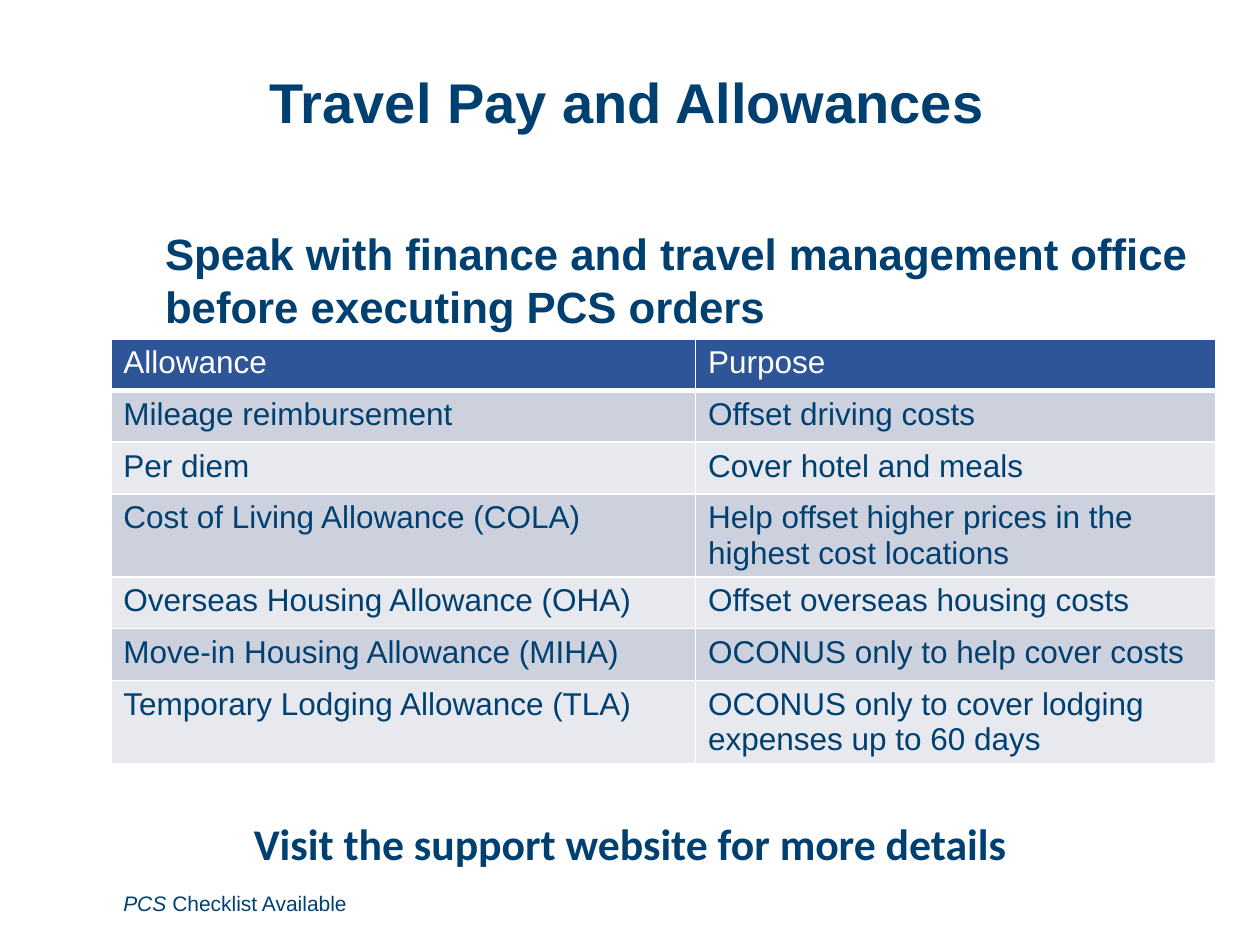
from lxml.etree import SubElement
from pptx import Presentation
from pptx.dml.color import RGBColor
from pptx.enum.text import MSO_ANCHOR, MSO_AUTO_SIZE, PP_ALIGN
from pptx.oxml.ns import qn
from pptx.util import Inches, Pt

NAVY = "004071"
WHITE = "FFFFFF"
HEADER_FILL = "2E5597"
BAND_FILLS = ["CDD1DD", "E8E9EF"]
ALLOWANCES = [
    ("Allowance", "Purpose"),
    ("Mileage reimbursement", "Offset driving costs"),
    ("Per diem", "Cover hotel and meals"),
    ("Cost of Living Allowance (COLA)",
     "Help offset higher prices in the highest cost locations"),
    ("Overseas Housing Allowance (OHA)", "Offset overseas housing costs"),
    ("Move-in Housing Allowance (MIHA)", "OCONUS only to help cover costs"),
    ("Temporary Lodging Allowance (TLA)",
     "OCONUS only to cover lodging expenses up to 60 days"),
]


def color(value):
    return RGBColor.from_string(value)


class SlideBuilder:
    def __init__(self, page, font="Arial", text_color=NAVY):
        self.page = page
        self.font = font
        self.text_color = text_color

    def style(self, span, size, bold=False, italic=False, font=None, fill=None):
        span.font.name = font or self.font
        span.font.size = Pt(size)
        span.font.bold = bold
        span.font.italic = italic
        span.font.color.rgb = color(fill or self.text_color)

    def place(self, box, left, top, width, height):
        box.left, box.top = Inches(left), Inches(top)
        box.width, box.height = Inches(width), Inches(height)

    def title(self, text, *bounds):
        box = self.page.shapes.title
        self.place(box, *bounds)
        frame = box.text_frame
        frame.text = text
        frame.auto_size = MSO_AUTO_SIZE.NONE
        frame.vertical_anchor = MSO_ANCHOR.MIDDLE
        para = frame.paragraphs[0]
        para.alignment = PP_ALIGN.LEFT
        para.line_spacing = 0.9
        self.style(para.runs[0], 32, bold=True)

    def body(self, text, *bounds):
        box = self.page.placeholders[1]
        self.place(box, *bounds)
        frame = box.text_frame
        frame.text = text
        frame.auto_size = MSO_AUTO_SIZE.NONE
        para = frame.paragraphs[0]
        properties = para._p.get_or_add_pPr()
        properties.set("marL", str(Inches(0.01)))
        properties.set("indent", "0")
        SubElement(properties, qn("a:buNone"))
        para.space_before = Pt(0)
        self.style(para.runs[0], 25, bold=True)

    def text(self, spans, bounds, size, align=PP_ALIGN.LEFT, font=None):
        """Add a one-paragraph box from (text, bold, italic) spans."""
        box = self.page.shapes.add_textbox(*map(Inches, bounds))
        box.text_frame.word_wrap = True
        para = box.text_frame.paragraphs[0]
        para.alignment = align
        for words, bold, italic in spans:
            span = para.add_run()
            span.text = words
            self.style(span, size, bold, italic, font)

    def border(self, cell, side, width):
        line = SubElement(cell._tc.get_or_add_tcPr(), qn(f"a:ln{side}"),
                          w=str(Pt(width)))
        fill = SubElement(line, qn("a:solidFill"))
        SubElement(fill, qn("a:srgbClr"), val=WHITE)

    def table(self, rows, left, top, column_widths, row_height):
        frame = self.page.shapes.add_table(
            len(rows), len(column_widths), Inches(left), Inches(top),
            Inches(sum(column_widths)), Inches(row_height * len(rows)))
        table = frame.table
        table.first_row = table.horz_banding = False
        for column, width in zip(table.columns, column_widths):
            column.width = Inches(width)
        for index, values in enumerate(rows):
            table.rows[index].height = Inches(row_height)
            is_header = index == 0
            fill = HEADER_FILL if is_header else BAND_FILLS[(index - 1) % 2]
            for column, value in enumerate(values):
                cell = table.cell(index, column)
                for side in "LRTB":
                    heavy = (side == "B" and is_header) or (side == "T" and index == 1)
                    self.border(cell, side, 3 if heavy else 1)
                cell.fill.solid()
                cell.fill.fore_color.rgb = color(fill)
                cell.text_frame.text = value
                self.style(cell.text_frame.paragraphs[0].runs[0], 18,
                           fill=WHITE if is_header else None)


def main():
    deck = Presentation()
    deck.slide_width, deck.slide_height = Inches(10), Inches(7.5)
    builder = SlideBuilder(deck.slides.add_slide(deck.slide_layouts[1]))
    builder.title("Travel Pay and Allowances", 2.04, 0.11, 7.26, 1.45)
    builder.body("Speak with finance and travel management office "
                 "before executing PCS orders", 1.2, 1.75, 8.57, 0.6)
    builder.table(ALLOWANCES, 0.88, 2.69, [4.64, 4.13], 0.41)
    builder.text([("Visit the support website for more details", True, False)],
                 (0, 6.43, 10, 0.52), 25, PP_ALIGN.CENTER, "Calibri")
    builder.text([("PCS ", False, True), ("Checklist Available", False, False)],
                 (0.88, 7.02, 6.82, 0.3), 12)
    deck.save("out.pptx")


if __name__ == "__main__":
    main()
